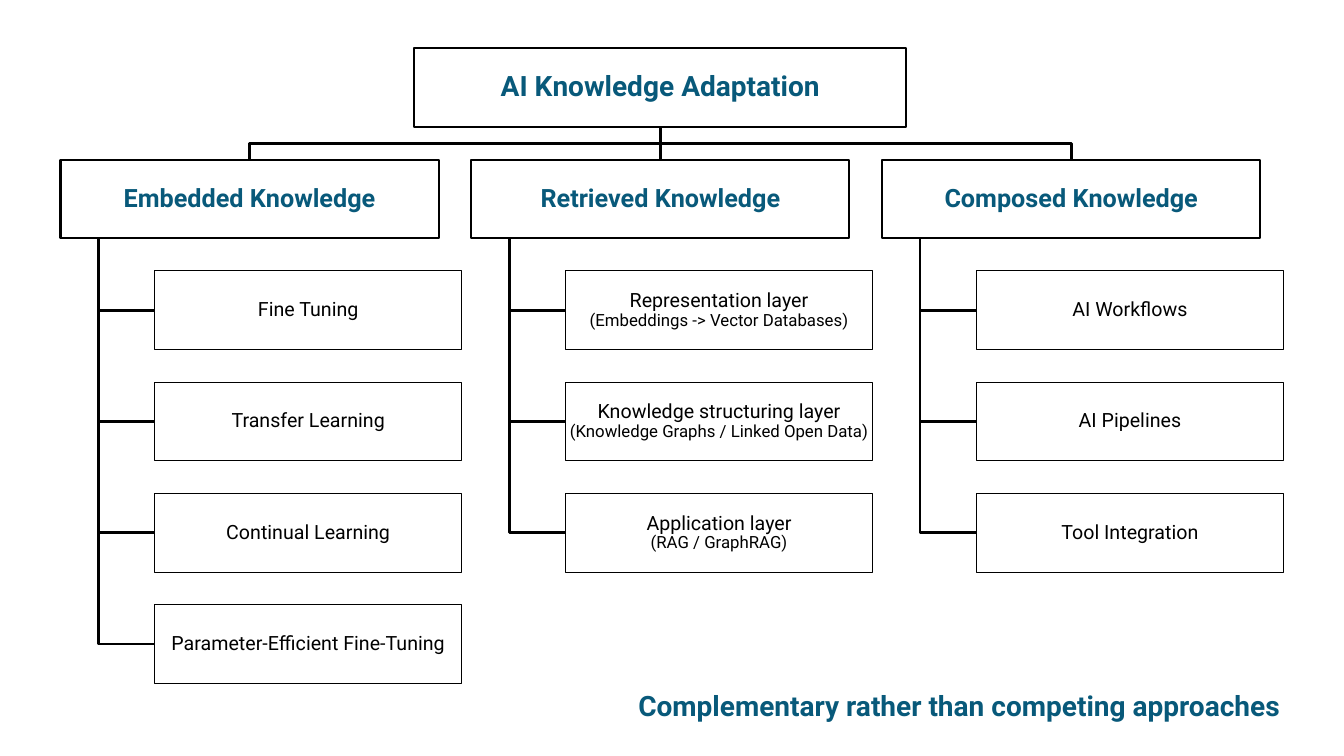
from copy import deepcopy
from dataclasses import dataclass

from lxml import etree
from pptx import Presentation
from pptx.dml.color import RGBColor
from pptx.enum.shapes import MSO_CONNECTOR, MSO_SHAPE
from pptx.enum.text import MSO_ANCHOR, PP_ALIGN
from pptx.oxml.ns import qn
from pptx.util import Inches, Pt

RECTANGLE = MSO_SHAPE.RECTANGLE
STRAIGHT = MSO_CONNECTOR.STRAIGHT
CENTER, RIGHT = PP_ALIGN.CENTER, PP_ALIGN.RIGHT
MIDDLE = MSO_ANCHOR.MIDDLE

ROOT = "AI Knowledge Adaptation"
BRANCHES = [
    ("Embedded Knowledge", [
        ("Fine Tuning",),
        ("Transfer Learning",),
        ("Continual Learning",),
        ("Parameter-Efficient Fine-Tuning",),
    ]),
    ("Retrieved Knowledge", [
        ("Representation layer", "(Embeddings -> Vector Databases)"),
        ("Knowledge structuring layer", "(Knowledge Graphs / Linked Open Data)"),
        ("Application layer", "(RAG / GraphRAG)"),
    ]),
    ("Composed Knowledge", [
        ("AI Workflows",),
        ("AI Pipelines",),
        ("Tool Integration",),
    ]),
]
TAKEAWAY = "Complementary rather than competing approaches"


@dataclass(frozen=True)
class Theme:
    font: str = "Roboto"
    accent: RGBColor = RGBColor(0x08, 0x59, 0x7A)
    ink: RGBColor = RGBColor(0, 0, 0)
    paper: RGBColor = RGBColor(0xFF, 0xFF, 0xFF)
    title_size: int = 20
    heading_size: int = 18
    item_size: int = 14
    detail_size: int = 12
    heavy_border: float = 1.5
    thin_border: float = 0.75
    link_width: float = 2


THEME = Theme()

# Grid in inches: three columns, six rows
SLIDE_WIDTH, SLIDE_HEIGHT = 13.33, 7.5
BOX_HEIGHT = 0.78
ROOT_WIDTH, HEADING_WIDTH, ITEM_WIDTH = 4.88, 3.75, 3.04
FIRST_LEFT, LAST_LEFT = 0.6, 8.75
FIRST_TOP, LAST_TOP = 0.48, 6.0
COLUMN_STEP = (LAST_LEFT - FIRST_LEFT) / 2
ROW_STEP = (LAST_TOP - FIRST_TOP) / 5
CENTER_X = (FIRST_LEFT + LAST_LEFT + HEADING_WIDTH) / 2
STEM_INDENT = HEADING_WIDTH / 10
ITEM_INDENT = HEADING_WIDTH / 4


def row_top(row):
    return FIRST_TOP + row * ROW_STEP


def column_left(column):
    return FIRST_LEFT + column * COLUMN_STEP


def add_span(para, text, size, color, bold):
    span = para.add_run()
    span.text = text
    span.font.name = THEME.font
    span.font.size = Pt(size)
    span.font.bold = bold
    span.font.color.rgb = color
    return span


def add_box(page, left, row, width, lines, sizes, color, border, bold=False):
    """Bordered box in a grid row; lines share one centred paragraph."""
    box = page.shapes.add_shape(RECTANGLE, Inches(left), Inches(row_top(row)),
                                Inches(width), Inches(BOX_HEIGHT))
    box.shadow.inherit = False
    box.fill.solid()
    box.fill.fore_color.rgb = THEME.paper
    box.line.color.rgb = THEME.ink
    box.line.width = Pt(border)
    frame = box.text_frame
    frame.word_wrap = True
    frame.vertical_anchor = MIDDLE
    frame.margin_left = frame.margin_right = Inches(0.01)
    frame.margin_top = frame.margin_bottom = Inches(0.01)
    para = frame.paragraphs[0]
    para.alignment = CENTER
    para.line_spacing = 0.9
    for index, (text, size) in enumerate(zip(lines, sizes)):
        if index:
            para.add_line_break()
            # The break takes the size of the line it ends
            para._p[-1].append(deepcopy(span._r.rPr))
        span = add_span(para, text, size, color, bold)


def add_link(page, points):
    """Line through the points: a connector if straight, else an open outline."""
    corners = [(Inches(x), Inches(y)) for x, y in points]
    if len(corners) == 2:
        link = page.shapes.add_connector(STRAIGHT, *corners[0], *corners[1])
        etree.SubElement(link._element.spPr, qn("a:effectLst"))
    else:
        builder = page.shapes.build_freeform(*corners[0])
        builder.add_line_segments(corners[1:], close=False)
        link = builder.convert_to_shape()
        link.shadow.inherit = False
        link.fill.background()
    link.line.color.rgb = THEME.ink
    link.line.width = Pt(THEME.link_width)


def add_links(page):
    root_bottom, heading_top = row_top(0) + BOX_HEIGHT, row_top(1)
    heading_bottom = heading_top + BOX_HEIGHT
    bus = (root_bottom + heading_top) / 2
    for column, (_, items) in enumerate(BRANCHES):
        left = column_left(column)
        heading_x = left + HEADING_WIDTH / 2
        bends = [] if column == 1 else [(CENTER_X, bus), (heading_x, bus)]
        add_link(page, [(CENTER_X, root_bottom), *bends, (heading_x, heading_top)])
        stem = left + STEM_INDENT
        for row in range(2, 2 + len(items)):
            middle = row_top(row) + BOX_HEIGHT / 2
            add_link(page, [(stem, heading_bottom), (stem, middle),
                            (left + ITEM_INDENT, middle)])


def add_boxes(page):
    add_box(page, CENTER_X - ROOT_WIDTH / 2, 0, ROOT_WIDTH, [ROOT],
            [THEME.title_size], THEME.accent, THEME.heavy_border, bold=True)
    for column, (heading, items) in enumerate(BRANCHES):
        left = column_left(column)
        add_box(page, left, 1, HEADING_WIDTH, [heading],
                [THEME.heading_size], THEME.accent, THEME.heavy_border, bold=True)
        for row, lines in enumerate(items, start=2):
            add_box(page, left + ITEM_INDENT, row, ITEM_WIDTH, lines,
                    [THEME.item_size, THEME.detail_size], THEME.ink,
                    THEME.thin_border)


def add_takeaway(page):
    box = page.shapes.add_textbox(Inches(4.81), Inches(LAST_TOP + BOX_HEIGHT),
                                  Inches(7.99), Inches(0.44))
    box.text_frame.word_wrap = True
    para = box.text_frame.paragraphs[0]
    para.alignment = RIGHT
    add_span(para, TAKEAWAY, THEME.title_size, THEME.accent, True)


def main():
    deck = Presentation()
    deck.slide_width, deck.slide_height = Inches(SLIDE_WIDTH), Inches(SLIDE_HEIGHT)
    page = deck.slides.add_slide(deck.slide_layouts[6])
    add_links(page)
    add_boxes(page)
    add_takeaway(page)
    deck.save("out.pptx")


if __name__ == "__main__":
    main()
